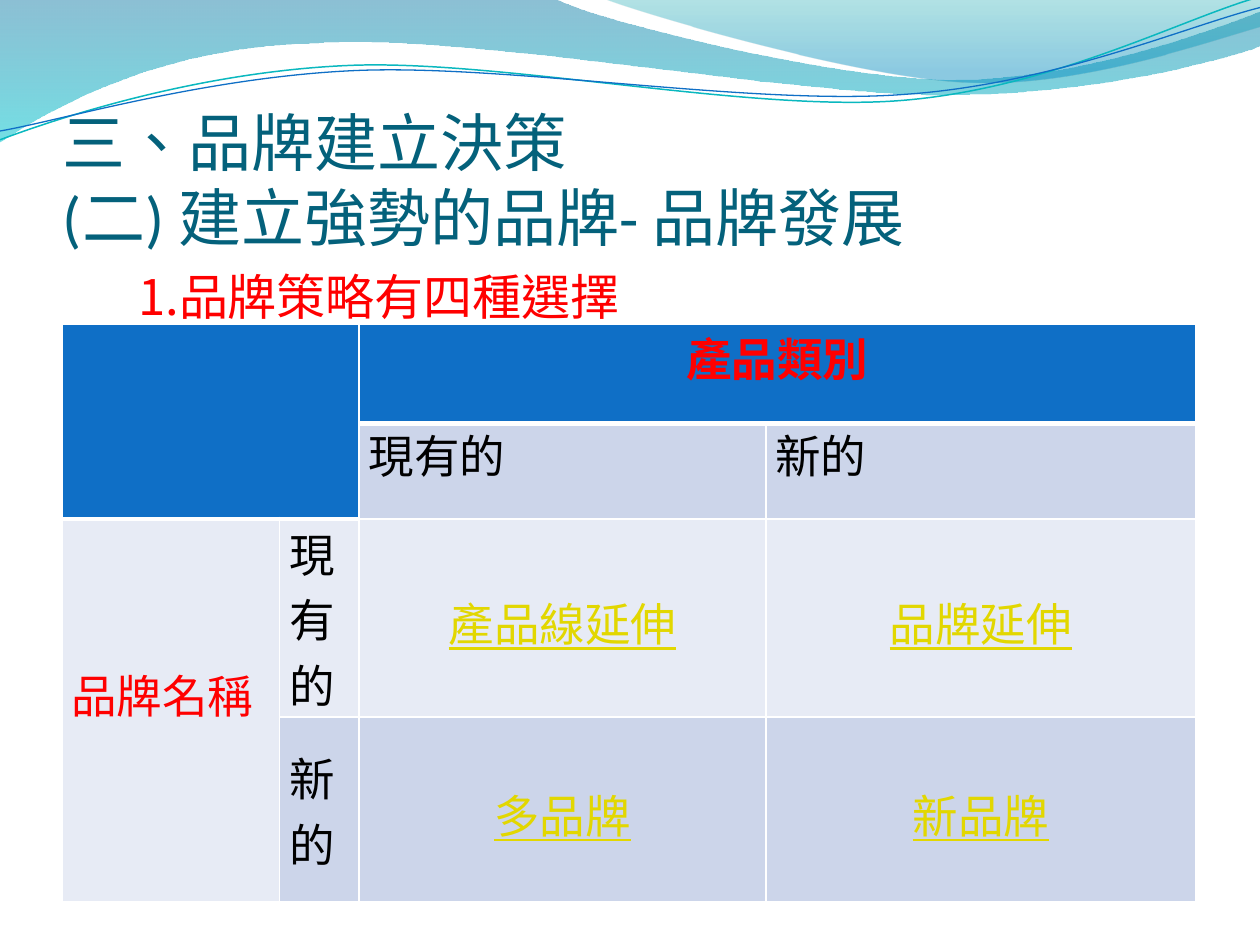
import collections
import itertools
import lxml.etree
import pptx
import pptx.dml.color
import pptx.enum.text
import pptx.oxml.ns
import pptx.util

RGBColor = pptx.dml.color.RGBColor
Align = pptx.enum.text.PP_ALIGN
Anchor = pptx.enum.text.MSO_ANCHOR
qn = pptx.oxml.ns.qn
Box = collections.namedtuple("Box", "left top width height")

COLUMNS, ROWS = 10, 7.5
UNIT = pptx.util.Inches(1)

WHITE = RGBColor(0xFF, 0xFF, 0xFF)
BLACK = RGBColor(0x00, 0x00, 0x00)
RED = RGBColor(0xFF, 0x00, 0x00)
YELLOW = RGBColor(0xE2, 0xD7, 0x00)
BLUE = RGBColor(0x0F, 0x6F, 0xC6)
TEAL = RGBColor(0x0A, 0xB8, 0xBF)
TITLE_TEAL = RGBColor(0x04, 0x61, 0x7B)
BAND_DARK = RGBColor(0xCC, 0xD5, 0xEA)
BAND_LIGHT = RGBColor(0xE7, 0xEB, 0xF5)
WAVE_BLUE = RGBColor(0x00, 0x74, 0xA1)
WAVE_AQUA = RGBColor(0x00, 0xC6, 0xCF)
CREST_AQUA = RGBColor(0x00, 0xA1, 0xA9)
CREST_BLUE = RGBColor(0x00, 0x8B, 0xBF)

BACK_WAVE = [
    (0, 0), (4.4, -0.01),
    (4.76, 0.17, 6.64, 0.63, 7.58, 0.63), (8.53, 0.63, 9.58, 0.26, 10, 0.09),
    (10.01, 0.36),
    (9.83, 0.44, 8.7, 0.76, 7.46, 0.75), (6.22, 0.75, 3.82, 0.28, 2.57, 0.34),
    (1.29, 0.36, 0.46, 0.83, -0.01, 1.13), (0, 0),
]
FRONT_WAVE = [
    (4.79, -0.01),
    (5.09, 0.11, 6.82, 0.62, 7.69, 0.65), (8.56, 0.69, 9.61, 0.32, 10, 0.21),
    (10, 0), (4.79, -0.01),
]
TEAL_CURVE = [
    (0, 1.11),
    (0.48, 0.93, 1.58, 0.57, 2.77, 0.52), (3.95, 0.47, 5.93, 0.89, 7.13, 0.8),
    (8.33, 0.71, 9.38, 0.15, 9.98, -0.02),
]
BLUE_CURVE = [
    (0, 1.04),
    (0.47, 0.96, 1.64, 0.61, 2.83, 0.56), (4.03, 0.51, 5.97, 0.84, 7.17, 0.75),
    (8.36, 0.67, 9.41, 0.21, 10, 0.06),
]


def lengths(box):
    return [pptx.util.Emu(round(value * UNIT)) for value in box]


def add_outline(page, box, steps, close):
    points = [
        ((box.left + x * box.width / COLUMNS) * UNIT, (box.top + y) * UNIT)
        for step in steps for x, y in zip(step[::2], step[1::2])
    ]
    builder = page.shapes.build_freeform(*points[0])
    builder.add_line_segments(points[1:], close=close)
    shape = builder.convert_to_shape()
    shape.shadow.inherit = False
    segments = iter(list(shape.element.iter(qn("a:lnTo"))))
    for step in steps[1:]:
        parts = list(itertools.islice(segments, len(step) // 2))
        if len(parts) == 3:
            curve = lxml.etree.Element(qn("a:cubicBezTo"))
            parts[0].addprevious(curve)
            for part in parts:
                curve.append(part[0])
                part.getparent().remove(part)
    return shape


def add_waves(page, box):
    for steps, stops in (
        (BACK_WAVE, [(0, WAVE_BLUE, 45), (1, WAVE_AQUA, 55)]),
        (FRONT_WAVE, [(0, CREST_AQUA, 30), (0.8, CREST_BLUE, 45)]),
    ):
        shape = add_outline(page, box, steps, True)
        shape.line.fill.background()
        shape.fill.gradient()
        shape.fill.gradient_angle = 270
        for stop, (position, color, _) in zip(shape.fill.gradient_stops, stops):
            stop.position = position
            stop.color.rgb = color
        nodes = shape.element.spPr.iter(qn("a:srgbClr"))
        for node, (_, _, opacity) in zip(nodes, stops):
            lxml.etree.SubElement(node, qn("a:alpha"), val=str(opacity * 1000))
    for steps, color, weight in ((TEAL_CURVE, TEAL, 0.85), (BLUE_CURVE, BLUE, 0.75)):
        shape = add_outline(page, box, steps, False)
        shape.fill.background()
        shape.line.color.rgb = color
        shape.line.width = pptx.util.Pt(weight)


def add_span(para, text, size, color, font, bold=False, underline=False):
    span = para.add_run()
    span.text = text
    span.font.size = pptx.util.Pt(size)
    span.font.name = font
    span.font.color.rgb = color
    span.font.bold = bold
    span.font.underline = underline
    span._r.get_or_add_rPr().set("lang", "zh-TW")


def add_title(page, box):
    frame = page.shapes.add_textbox(*lengths(box)).text_frame
    frame.word_wrap = True
    frame.vertical_anchor = Anchor.BOTTOM
    frame.margin_left = frame.margin_right = frame.margin_bottom = 0
    para = frame.paragraphs[0]
    add_span(para, "三、品牌建立決策", 36, TITLE_TEAL, "Calibri")
    para.add_line_break()
    add_span(para, "(二) 建立強勢的品牌- 品牌發展", 36, TITLE_TEAL, "Calibri")


def add_numbered_heading(page, box):
    frame = page.shapes.add_textbox(*lengths(box)).text_frame
    frame.word_wrap = False
    frame.auto_size = pptx.enum.text.MSO_AUTO_SIZE.SHAPE_TO_FIT_TEXT
    frame.vertical_anchor = Anchor.MIDDLE
    para = frame.paragraphs[0]
    add_span(para, "品牌策略有四種選擇", 28, RED, "Times New Roman")
    properties = para._p.get_or_add_pPr()
    properties.set("marL", str(UNIT))
    properties.set("indent", "0")
    color = lxml.etree.SubElement(properties, qn("a:buClr"))
    lxml.etree.SubElement(color, qn("a:srgbClr"), val=str(RED))
    lxml.etree.SubElement(properties, qn("a:buFont"), typeface="Times New Roman")
    lxml.etree.SubElement(properties, qn("a:buAutoNum"), type="arabicPeriod")


def set_borders(cell, weights):
    properties = cell._tc.get_or_add_tcPr()
    for side, weight in zip("LRTB", weights):
        line = lxml.etree.SubElement(
            properties, qn("a:ln" + side), w=str(pptx.util.Pt(weight)))
        fill = lxml.etree.SubElement(line, qn("a:solidFill"))
        lxml.etree.SubElement(fill, qn("a:srgbClr"), val=str(WHITE))


def fill_cell(cell, text, color, align=Align.LEFT, exact=True, bold=False, option=False):
    if option:
        cell.margin_top = pptx.util.Pt(24)
    para = cell.text_frame.paragraphs[0]
    para.alignment = align
    para.space_before = pptx.util.Pt(6)
    if exact:
        para.line_spacing = pptx.util.Pt(18)
    add_span(para, text, 26, color, "Times New Roman", bold, option)


def add_strategy_table(page, box):
    widths, heights = (1.73, 0.63, 3.23, 3.41), (0.79, 0.76, 1.57, 1.47)
    frame = page.shapes.add_table(len(heights), len(widths), *lengths(box))
    table = frame.table
    for column, width in zip(table.columns, lengths(widths)):
        column.width = width
    for row, height in zip(table.rows, lengths(heights)):
        row.height = height

    def under_header(row, column):
        return row == 0 or (row == 1 and column < 2)

    for row, column in itertools.product(range(len(heights)), range(len(widths))):
        cell = table.cell(row, column)
        cell.vertical_anchor = Anchor.MIDDLE
        cell.margin_left = cell.margin_right = pptx.util.Pt(5.4)
        cell.margin_top = cell.margin_bottom = 0
        top = 3 if row and under_header(row - 1, column) else 1
        set_borders(cell, (1, 1, top, 3 if under_header(row, column) else 1))
        cell.fill.solid()
        light = row == 2 or (row == 3 and column == 0)
        cell.fill.fore_color.rgb = (
            BLUE if under_header(row, column) else BAND_LIGHT if light else BAND_DARK)

    for first, last in (((0, 0), (1, 1)), ((0, 2), (0, 3)), ((2, 0), (3, 0))):
        table.cell(*first).merge(table.cell(*last))
    fill_cell(table.cell(0, 2), "產品類別", RED, Align.CENTER, bold=True)
    fill_cell(table.cell(2, 0), "品牌名稱", RED)
    options = (("產品線延伸", "品牌延伸"), ("多品牌", "新品牌"))
    for index, (status, names) in enumerate(zip(("現有的", "新的"), options), start=2):
        fill_cell(table.cell(1, index), status, BLACK)
        fill_cell(table.cell(index, 1), status, BLACK, exact=False)
        for column, name in enumerate(names, start=2):
            fill_cell(table.cell(index, column), name, YELLOW, Align.CENTER, option=True)


def main():
    deck = pptx.Presentation()
    deck.slide_width, deck.slide_height = lengths((COLUMNS, ROWS))
    page = deck.slides.add_slide(deck.slide_layouts[6])
    add_waves(page, Box(0, 0, COLUMNS, 1.13))
    add_title(page, Box(0.5, 0.77, 9, 1.25))
    add_strategy_table(page, Box(0.49, 2.57, 9, 4.59))
    add_numbered_heading(page, Box(0, 2.06, 5.04, 0.57))
    deck.save("out.pptx")


if __name__ == "__main__":
    main()
